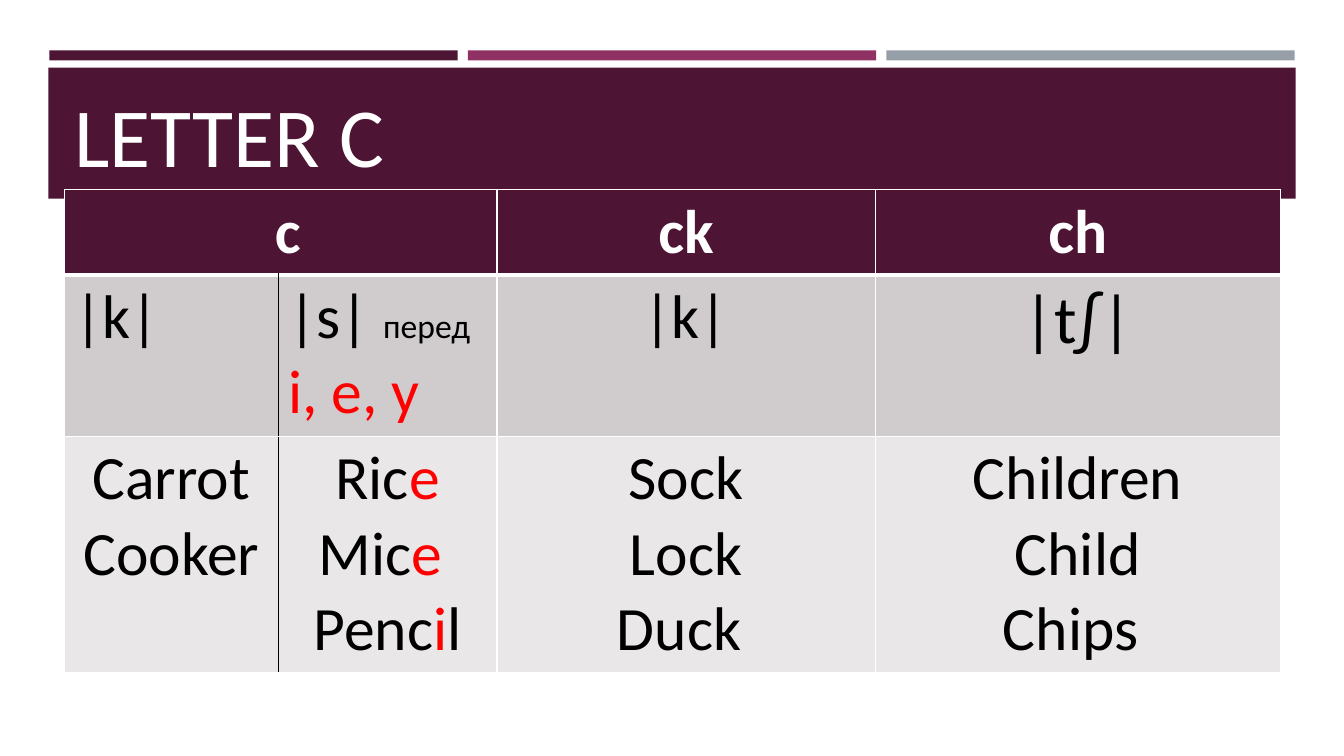
from dataclasses import dataclass

from lxml.etree import SubElement
from pptx import Presentation
from pptx.dml.color import RGBColor
from pptx.enum.shapes import MSO_SHAPE
from pptx.enum.text import MSO_ANCHOR, PP_ALIGN
from pptx.oxml.ns import qn
from pptx.util import Pt

PX = 9144


@dataclass(frozen=True)
class Theme:
    """Colours, font and type sizes of the slide."""
    plum: str = "4D1434"
    rose: str = "903163"
    slate: str = "969FA7"
    white: str = "FFFFFF"
    black: str = "000000"
    red: str = "FF0000"
    mid: str = "D0CCCE"
    pale: str = "E9E7E8"
    font: str = "Calibri"
    title: int = 60
    sound: int = 48
    body: int = 44
    note: int = 24


T = Theme()
COLS = (212, 217, 375, 402)
ROWS = (84, 160, 234)
FILLS = (T.plum, T.mid, T.pale)
RED = {"color": T.red}
CELLS = (
    ([[" c"]], None, [["ck"]], [["ch"]]),
    ([["|k|"]],
     [["|s| ", ("перед", {"size": T.note}), " ", ("i, e, y", RED)]],
     [["|k|"]],
     [[("|t∫|", {"size": T.sound})]]),
    ([["Carrot"], ["Cooker"]],
     [["Ric", ("e", RED)], ["Mic", ("e ", RED)], ["Penc", ("i", RED), "l"]],
     [["Sock"], ["Lock"], ["Duck "]],
     [["Children"], ["Child"], ["Chips "]]),
)


def emu(box):
    """Turn px lengths into EMU."""
    return [n * PX for n in box]


def style(font, color, size, bold=False):
    """Format a font from the theme."""
    for key, val in {"name": T.font, "size": Pt(size), "bold": bold}.items():
        setattr(font, key, val)
    font.color.rgb = RGBColor.from_string(color)


def block(slide, box, color):
    """Draw one plain filled rectangle."""
    shape = slide.shapes.add_shape(MSO_SHAPE.RECTANGLE, *emu(box))
    shape.shadow.inherit = False
    shape.fill.solid()
    shape.fill.fore_color.rgb = RGBColor.from_string(color)
    shape.line.fill.background()


def strips(slide, box, gap=10):
    """Place three equal strips across the box."""
    left, top, width, height = box
    wide = (width - 2 * gap) // 3
    for i, color in enumerate((T.plum, T.rose, T.slate)):
        block(slide, (left + i * (wide + gap), top, wide, height), color)


def banner(slide, box):
    """Place the title over its band."""
    left, top, width, height = box
    block(slide, box, T.plum)
    title = slide.shapes.title
    place = emu((left + 16, top + 10, width - 31, height - 19))
    for key, val in zip(("left", "top", "width", "height"), place):
        setattr(title, key, val)
    frame = title.text_frame
    frame.text = "LETTER C"
    frame.vertical_anchor = MSO_ANCHOR.BOTTOM
    para = frame.paragraphs[0]
    para.alignment = PP_ALIGN.LEFT
    style(para.runs[0].font, T.white, T.title)
    tree = slide.shapes._spTree
    tree.remove(title._element)
    tree.append(title._element)


def edges(cell, lines):
    """Draw the cell borders from side, colour and width."""
    props = cell._tc.get_or_add_tcPr()
    for side, (color, width) in lines.items():
        line = SubElement(props, qn(f"a:ln{side}"), w=str(Pt(width)))
        fill = SubElement(line, qn("a:solidFill"))
        SubElement(fill, qn("a:srgbClr"), val=color)


def write(cell, paras, align, base):
    """Fill a cell with paragraphs of styled runs."""
    frame = cell.text_frame
    for i, parts in enumerate(paras):
        para = frame.add_paragraph() if i else frame.paragraphs[0]
        para.alignment = align
        for part in parts:
            text, extra = (part, {}) if isinstance(part, str) else part
            run = para.add_run()
            run.text = text
            style(run.font, **{**base, **extra})


def chart(slide, box):
    """Build the table of letters, sounds and words."""
    table = slide.shapes.add_table(len(ROWS), len(COLS), *emu(box)).table
    table.horz_banding = False
    for col, width in zip(table.columns, COLS):
        col.width = width * PX
    for row, height in zip(table.rows, ROWS):
        row.height = height * PX
    table.cell(0, 0).merge(table.cell(0, 1))
    for r, (line, color) in enumerate(zip(CELLS, FILLS)):
        head = r == 0
        base = {"color": T.white if head else T.black,
                "size": T.body, "bold": head}
        for c, paras in enumerate(line):
            cell = table.cell(r, c)
            sides = {s: (T.white, 1) for s in "LRTB"}
            if head:
                sides["B"] = (T.white, 3)
            elif c < 2:
                sides["LR"[c == 0]] = (T.black, 1)
            if r == 1:
                sides["T"] = (T.white, 3)
            edges(cell, sides)
            cell.fill.solid()
            cell.fill.fore_color.rgb = RGBColor.from_string(color)
            left = r == 1 and c < 2
            write(cell, paras or [],
                  PP_ALIGN.LEFT if left else PP_ALIGN.CENTER, base)


def main():
    """Build and save the slide."""
    deck = Presentation()
    deck.slide_width, deck.slide_height = emu((1333, 750))
    slide = deck.slides.add_slide(deck.slide_layouts[5])
    strips(slide, (49, 50, 1235, 10))
    banner(slide, (48, 67, 1237, 130))
    chart(slide, (64, 188, sum(COLS), sum(ROWS)))
    deck.save("out.pptx")


if __name__ == "__main__":
    main()
